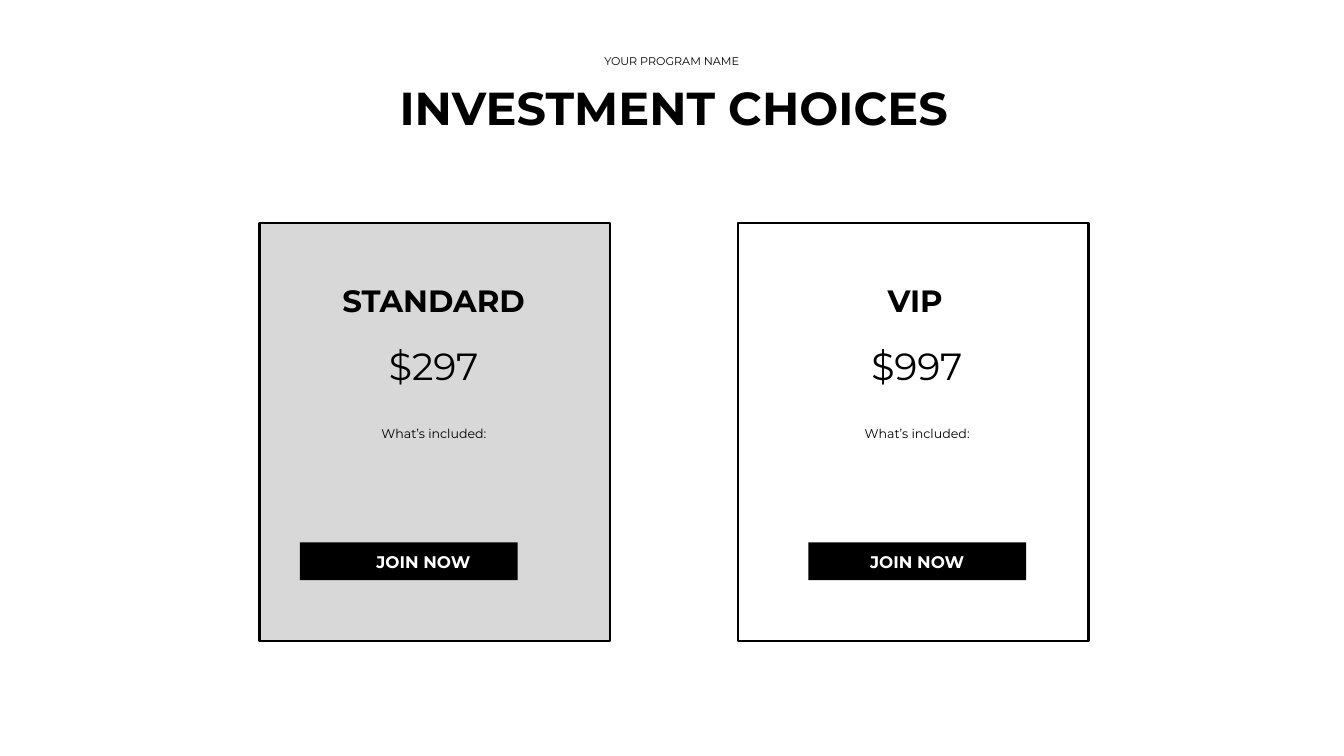
from pptx import Presentation
from pptx.dml.color import RGBColor
from pptx.enum import shapes, text
from pptx.util import Inches, Pt

FONT = "Montserrat"
BLACK, WHITE, GREY = "000000", "FFFFFF", "D8D8D8"

# name, price, card fill, then left edges and the name's width
PLANS = [
    dict(name="STANDARD", price="$297", fill=GREY, card=5.15, name_left=6.12,
         name_width=4.97, price_left=6.12, note=5.95, button=5.95, label=6.53),
    dict(name="VIP", price="$997", fill=None, card=14.64, name_left=15.34,
         name_width=5.64, price_left=15.71, note=15.54, button=16.04, label=16.33),
]


def color(value):
    return RGBColor.from_string(value)


def add_label(page, wording, left, top, width, height, size,
              bold=False, ink=BLACK, spacing=None):
    box = page.shapes.add_textbox(Inches(left), Inches(top), Inches(width), Inches(height))
    frame = box.text_frame
    frame.word_wrap = True
    frame.auto_size = text.MSO_AUTO_SIZE.SHAPE_TO_FIT_TEXT
    frame.margin_left = frame.margin_right = Inches(0.05)
    frame.margin_top = frame.margin_bottom = Inches(0.05)
    frame.text = wording
    para = frame.paragraphs[0]
    para.alignment = text.PP_ALIGN.CENTER
    if spacing:
        para.line_spacing = spacing
    font = para.runs[0].font
    font.name, font.size, font.bold = FONT, Pt(size), bold
    font.color.rgb = color(ink)


def add_panel(page, left, top, width, height, fill=None, outline=None):
    panel = page.shapes.add_shape(shapes.MSO_SHAPE.RECTANGLE, Inches(left),
                                  Inches(top), Inches(width), Inches(height))
    panel.shadow.inherit = False
    if fill:
        panel.fill.solid()
        panel.fill.fore_color.rgb = color(fill)
    else:
        panel.fill.background()
    if outline:
        panel.line.color.rgb = color(outline)
        panel.line.width = Pt(3)
    else:
        panel.line.fill.background()


def add_plan(page, plan):
    # Card with name, price and note
    add_panel(page, plan["card"], 4.42, 6.96, 8.3, plan["fill"], BLACK)
    add_label(page, plan["name"], plan["name_left"], 5.55, plan["name_width"], 0.84, 44, bold=True)
    add_label(page, plan["price"], plan["price_left"], 6.76, 4.97, 1.01, 54)
    add_label(page, "What’s included:", plan["note"], 8.25, 5.32, 0.4, 18, spacing=1.5)
    # Button
    add_panel(page, plan["button"], 10.76, 4.32, 0.75, BLACK)
    add_label(page, "JOIN NOW", plan["label"], 10.89, 3.74, 0.5, 24, bold=True, ink=WHITE)


def main():
    deck = Presentation()
    deck.slide_width, deck.slide_height = Inches(26.67), Inches(15)
    page = deck.slides.add_slide(deck.slide_layouts[6])
    page.background.fill.solid()
    page.background.fill.fore_color.rgb = color(WHITE)

    # Heading
    add_label(page, "INVESTMENT CHOICES", 6.74, 1.52, 13.26, 1.21, 66, bold=True)
    add_label(page, "YOUR PROGRAM NAME", 9.9, 1.02, 6.86, 0.37, 16)

    # Plans
    for plan in PLANS:
        add_plan(page, plan)

    deck.save("out.pptx")


if __name__ == "__main__":
    main()
